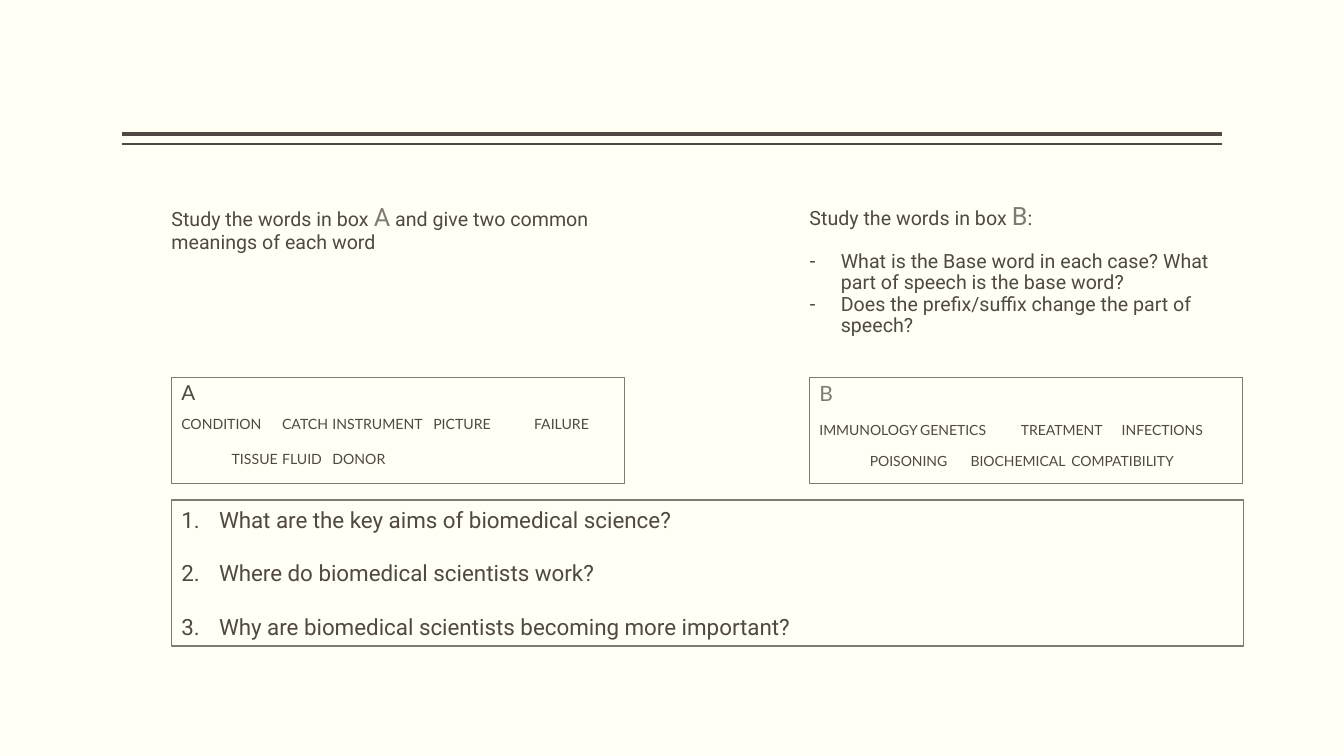
from dataclasses import dataclass

from lxml.etree import SubElement
from pptx import Presentation
from pptx.dml.color import RGBColor as RGB
from pptx.enum.shapes import MSO_CONNECTOR as Connector, MSO_SHAPE as Shape
from pptx.enum.text import MSO_ANCHOR as Anchor, MSO_AUTO_SIZE as AutoSize, PP_ALIGN as Align
from pptx.oxml.ns import qn
from pptx.util import Cm, Pt


@dataclass(frozen=True)
class Theme:
    """Colours, fonts and type sizes of the slide."""
    paper: RGB = RGB(0xFF, 0xFF, 0xF3)
    ink: RGB = RGB(0x51, 0x48, 0x43)
    accent: RGB = RGB(0x81, 0x7A, 0x74)
    prose: str = "Roboto"
    words: str = "Lato"
    task: float = 14
    letter: float = 18
    question: float = 16


THEME = Theme()


@dataclass(frozen=True)
class Box:
    """A region of the slide in centimetres."""
    left: float
    top: float
    width: float
    height: float

    def place(self):
        """Return the four lengths of the region."""
        return [Cm(side) for side in (self.left, self.top, self.width, self.height)]


def apply(target, formats):
    """Set every attribute named in formats."""
    for name, value in formats.items():
        setattr(target, name, value)


def prepare(frame, anchor, side=0.25):
    """Set the wrapping, anchor and insets of a text frame."""
    apply(frame, dict(word_wrap=True, auto_size=AutoSize.NONE, vertical_anchor=anchor,
                      margin_left=Cm(side), margin_right=Cm(side),
                      margin_top=Cm(0.13), margin_bottom=Cm(0.13)))


def add_line(frame, parts, font, spacing=0.9, before=0, hang=0, mark=None, tabs=()):
    """Write one paragraph from (text, size, colour) parts."""
    first = frame.paragraphs[0]
    line = frame.add_paragraph() if first.runs else first
    apply(line, dict(alignment=Align.LEFT, line_spacing=spacing,
                     space_before=Pt(before), space_after=Pt(0)))
    properties = line._p.get_or_add_pPr()
    properties.set("marL", str(Cm(hang)))
    properties.set("indent", str(-Cm(hang)))
    tag, attributes = mark or ("a:buNone", {})
    SubElement(properties, qn(tag), attributes)
    if tabs:
        stops = SubElement(properties, qn("a:tabLst"))
        for stop in tabs:
            SubElement(stops, qn("a:tab"), pos=str(Cm(stop)), algn="l")
    for text, size, colour in parts:
        run = line.add_run()
        run.text = text
        apply(run.font, dict(name=font, size=Pt(size), bold=False))
        run.font.color.rgb = colour


def add_header_rules(slide, box):
    """Draw a thick and a thin rule at the top and bottom of the box."""
    for drop, weight in ((0, 3), (box.height, 1)):
        y = Cm(box.top + drop)
        rule = slide.shapes.add_connector(
            Connector.STRAIGHT, Cm(box.left), y, Cm(box.left + box.width), y)
        rule.line.color.rgb = THEME.ink
        rule.line.width = Pt(weight)
        SubElement(rule._element.spPr, qn("a:effectLst"))


def add_task(placeholder, box, letter, ending, points=()):
    """Fill a placeholder with the task for one word box and its points."""
    apply(placeholder, dict(zip(("left", "top", "width", "height"), box.place())))
    frame = placeholder.text_frame
    prepare(frame, Anchor.BOTTOM, side=0)
    add_line(frame, [("Study the words in box ", THEME.task, THEME.ink),
                     (letter, THEME.letter, THEME.accent),
                     (ending, THEME.task, THEME.ink)], THEME.prose)
    for number, point in enumerate(points):
        add_line(frame, [(point, THEME.task, THEME.ink)], THEME.prose,
                 before=0 if number else 14.8, hang=0.79, mark=("a:buChar", {"char": "-"}))


def add_panel(slide, box, anchor):
    """Draw an outlined box and return its text frame."""
    panel = slide.shapes.add_shape(Shape.RECTANGLE, *box.place())
    panel.shadow.inherit = False
    panel.fill.background()
    panel.line.color.rgb = THEME.accent
    panel.line.width = Pt(0.75)
    prepare(panel.text_frame, anchor)
    return panel.text_frame


def add_word_box(slide, box, heading, size, spacing, rows):
    """Draw a lettered box with rows of words set on tab stops."""
    frame = add_panel(slide, box, Anchor.TOP)
    add_line(frame, [heading], THEME.words)
    for before, words, tabs in rows:
        lead = "\t" * (len(tabs) - len(words) + 1)
        add_line(frame, [(lead + "\t".join(words), size, THEME.ink)], THEME.words,
                 spacing=spacing, before=before, tabs=tabs)


def add_questions(slide, box, questions):
    """Draw the box of numbered questions."""
    frame = add_panel(slide, box, Anchor.MIDDLE)
    for number, question in enumerate(questions):
        add_line(frame, [(question, THEME.question, THEME.ink)], THEME.prose, spacing=1.0,
                 before=18.75 if number else 0, hang=0.95,
                 mark=("a:buAutoNum", {"type": "arabicPeriod"}))


def main():
    """Build the vocabulary slide and save it."""
    deck = Presentation()
    deck.slide_width, deck.slide_height = Cm(33.87), Cm(19.05)
    slide = deck.slides.add_slide(deck.slide_layouts[1])
    slide.background.fill.solid()
    slide.background.fill.fore_color.rgb = THEME.paper
    left, right = 4.32, 20.4
    title, body = slide.placeholders

    add_header_rules(slide, Box(3.07, 3.38, 27.73, 0.25))
    add_task(title, Box(left, 5, 10.92, 1.52), "A",
             " and give two common meanings of each word")
    add_task(body, Box(right, 4.93, 10.92, 3.68), "B", ":", [
        "What is the Base word in each case? What part of speech is the base word?",
        "Does the prefix/suffix change the part of speech?"])
    add_word_box(slide, Box(left, 9.52, 11.43, 2.67), ("A", 14.7, THEME.ink), 10.1, 0.7, [
        (10.4, ["CONDITION", "CATCH", "INSTRUMENT", "PICTURE", "FAILURE"],
         [2.47, 4.08, 6.8, 8.8]),
        (17, ["TISSUE", "FLUID", "DONOR"], [2.53, 4.15, 5.52])])
    add_word_box(slide, Box(right, 9.52, 10.92, 2.67), ("B", 15, THEME.accent), 10, 0.9, [
        (13, ["IMMUNOLOGY", "GENETICS", "TREATMENT", "INFECTIONS"], [3, 5.2, 7.79]),
        (10.8, ["POISONING", "BIOCHEMICAL", "COMPATIBILITY"], [1.26, 3.68, 6.5])])
    add_questions(slide, Box(left, 12.6, 27.02, 3.68), [
        "What are the key aims of biomedical science?",
        "Where do biomedical scientists work?",
        "Why are biomedical scientists becoming more important?"])
    deck.save("out.pptx")


if __name__ == "__main__":
    main()
